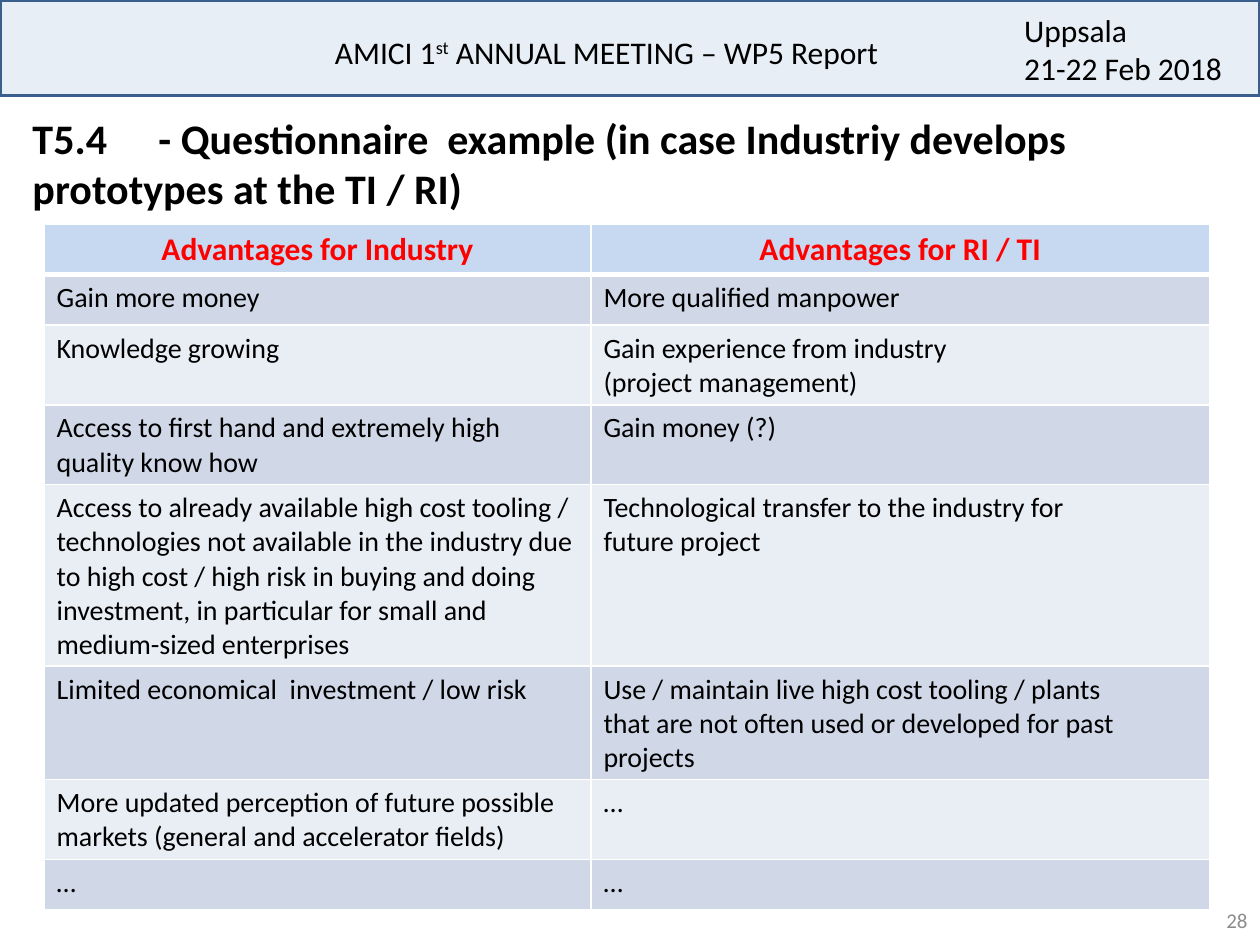
from lxml import etree
from pptx import Presentation
from pptx.dml.color import RGBColor
from pptx.enum import shapes, text
from pptx.oxml import ns
from pptx.util import Inches, Pt

BLACK = RGBColor(0x00, 0x00, 0x00)
RED = RGBColor(0xFF, 0x00, 0x00)
GRAY = RGBColor(0x8C, 0x8C, 0x8C)
WHITE = RGBColor(0xFF, 0xFF, 0xFF)
BANNER = RGBColor(0x4F, 0x81, 0xBD)
BANNER_EDGE = RGBColor(0x3A, 0x5F, 0x8C)
HEAD_FILL = RGBColor(0xC6, 0xD9, 0xF1)
BAND_FILLS = [RGBColor(0xE9, 0xED, 0xF4), RGBColor(0xD0, 0xD8, 0xE8)]
FONT = "Calibri"
LEFT, RIGHT, CENTER = text.PP_ALIGN.LEFT, text.PP_ALIGN.RIGHT, text.PP_ALIGN.CENTER

# Content
MEETING = [("AMICI 1", False), ("st", True), (" ANNUAL MEETING – WP5 Report", False)]
VENUE = "Uppsala\n21-22 Feb 2018"
TITLE = ("T5.4\t- Questionnaire  example (in case Industriy develops "
         "prototypes at the TI / RI)")
PAGE_NUMBER = "28"
ROWS = [
    ("Advantages for Industry", "Advantages for RI / TI"),
    ("Gain more money", "More qualified manpower"),
    ("Knowledge growing", "Gain experience from industry\n(project management)"),
    ("Access to first hand and extremely high quality know how", "Gain money (?)"),
    ("Access to already available high cost tooling / technologies not available "
     "in the industry due to high cost / high risk in buying and doing investment, "
     "in particular for small and medium-sized enterprises",
     "Technological transfer to the industry for\nfuture project"),
    ("Limited economical  investment / low risk",
     "Use / maintain live high cost tooling / plants\n"
     "that are not often used or developed for past projects"),
    ("More updated perception of future possible markets "
     "(general and accelerator fields)", "…"),
    ("…", "…"),
]
LINES_PER_ROW = [1, 1, 2, 2, 5, 3, 2, 1]
COLUMN_WIDTHS = [4.34, 4.91]
MIN_ROW, LINE_HEIGHT, ROW_PADDING = 0.4, 0.27, 0.09


def style(frame, size, color=BLACK, bold=False, align=LEFT):
    for para in frame.paragraphs:
        para.alignment = align
        for span in para.runs:
            font = span.font
            font.name, font.size, font.bold = FONT, Pt(size), bold
            font.color.rgb = color


def add_text(page, place, words, size, **look):
    box = page.shapes.add_textbox(*map(Inches, place))
    box.text_frame.word_wrap = True
    box.text_frame.text = words
    style(box.text_frame, size, **look)
    return box


def set_borders(cell, bottom):
    properties = cell._tc.get_or_add_tcPr()
    sides = [("lnL", 1), ("lnR", 1), ("lnT", 1), ("lnB", bottom)]
    for index, (side, width) in enumerate(sides):
        line = etree.Element(ns.qn("a:" + side), w=str(Pt(width)))
        fill = etree.SubElement(line, ns.qn("a:solidFill"))
        etree.SubElement(fill, ns.qn("a:srgbClr"), val=str(WHITE))
        properties.insert(index, line)


def add_banner(page, width):
    banner = page.shapes.add_shape(
        shapes.MSO_SHAPE.RECTANGLE, 0, 0, width, Inches(0.76))
    banner.shadow.inherit = False
    banner.fill.solid()
    banner.fill.fore_color.rgb = BANNER
    color = banner.fill._xPr.find(".//" + ns.qn("a:srgbClr"))
    etree.SubElement(color, ns.qn("a:alpha"), val="13000")
    banner.line.color.rgb = BANNER_EDGE
    banner.line.width = Pt(2)

    add_text(page, (8.03, 0.04, 1.95, 0.71), VENUE, 18)
    meeting = add_text(page, (2.56, 0.21, 5.35, 0.4), "", 18)
    para = meeting.text_frame.paragraphs[0]
    for words, raised in MEETING:
        span = para.add_run()
        span.text = words
        if raised:
            span._r.get_or_add_rPr().set("baseline", "30000")
    style(meeting.text_frame, 18)


def add_advantages(page):
    heights = [max(MIN_ROW, lines * LINE_HEIGHT + ROW_PADDING)
               for lines in LINES_PER_ROW]
    place = (0.35, 1.78, sum(COLUMN_WIDTHS), sum(heights))
    table = page.shapes.add_table(
        len(ROWS), len(COLUMN_WIDTHS), *map(Inches, place)).table
    for column, width in zip(table.columns, COLUMN_WIDTHS):
        column.width = Inches(width)
    for r, (row, height) in enumerate(zip(ROWS, heights)):
        table.rows[r].height = Inches(height)
        is_head = r == 0
        for c, words in enumerate(row):
            cell = table.cell(r, c)
            cell.text_frame.text = words
            if is_head:
                style(cell.text_frame, 18, RED, True, CENTER)
            else:
                style(cell.text_frame, 16)
            cell.fill.solid()
            cell.fill.fore_color.rgb = HEAD_FILL if is_head else BAND_FILLS[r % 2]
            set_borders(cell, 3 if is_head else 1)


def main():
    deck = Presentation()
    deck.slide_width, deck.slide_height = Inches(10), Inches(7.5)
    page = deck.slides.add_slide(deck.slide_layouts[6])

    # Banner, page number, table and title
    add_banner(page, deck.slide_width)
    number = add_text(page, (7.67, 7.1, 2.33, 0.4), PAGE_NUMBER, 12,
                      color=GRAY, align=RIGHT)
    number.text_frame.vertical_anchor = text.MSO_ANCHOR.MIDDLE
    add_advantages(page)
    add_text(page, (0.16, 0.84, 9.84, 1.31), TITLE, 24, bold=True)
    deck.save("out.pptx")


if __name__ == "__main__":
    main()
